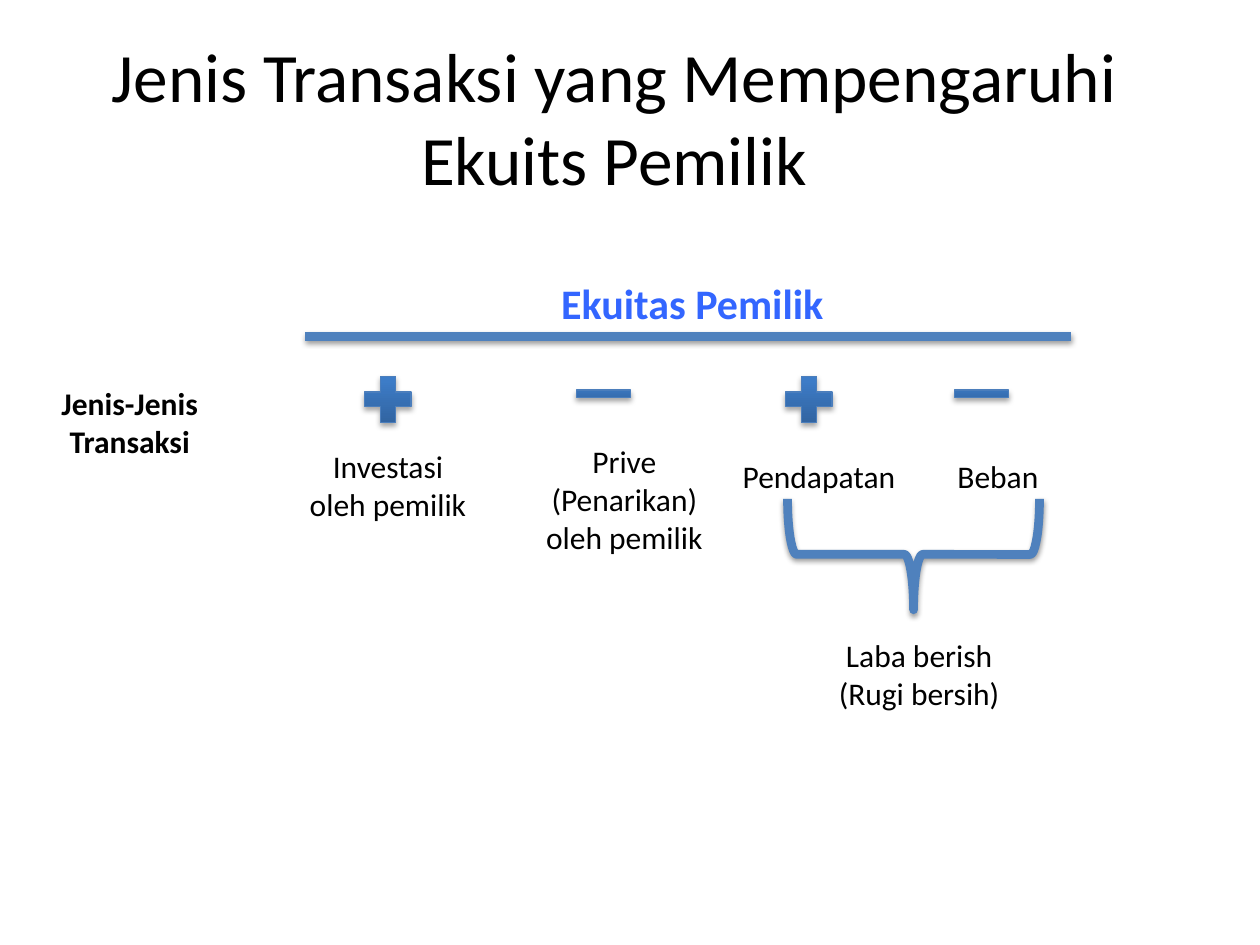
from lxml.etree import SubElement
from pptx import Presentation
from pptx.dml.color import RGBColor
from pptx.enum.shapes import MSO_CONNECTOR, MSO_SHAPE
from pptx.enum.text import MSO_ANCHOR, PP_ALIGN
from pptx.oxml.ns import qn
from pptx.util import Inches, Pt

COLORS = {
    "text": "000000", "heading": "3366FF", "rule": "4F81BD", "sign_edge": "4B7EBC",
    "sign_bottom": "2F5F99", "sign_middle": "3D7CC7", "sign_top": "3A7CCB",
}
FONT = "Calibri"
TITLE = "Jenis Transaksi yang Mempengaruhi Ekuits Pemilik"
LABELS = [
    ("Jenis-Jenis Transaksi", (0, 3, 2.06, 0.71), 18, True, "text"),
    ("Investasi oleh pemilik", (2.33, 3.5, 1.5, 0.71), 18, False, "text"),
    ("Prive (Penarikan) oleh pemilik", (4.08, 3.46, 1.75, 1.01), 18, False, "text"),
    ("Pendapatan", (5.75, 3.58, 1.5, 0.4), 18, False, "text"),
    ("Beban", (7.17, 3.58, 1.5, 0.4), 18, False, "text"),
    ("Laba berish (Rugi bersih)", (6.42, 5, 1.75, 0.71), 18, False, "text"),
    ("Ekuitas Pemilik", (4.08, 2.15, 2.83, 0.5), 24, True, "heading"),
]
SIGNS = [("plus", 2.83), ("minus", 4.5), ("plus", 6.17), ("minus", 7.5)]
SIGN_FORMS = {
    "plus": (MSO_SHAPE.MATH_PLUS, 2.92, 0.5, 0.5),
    "minus": (MSO_SHAPE.MATH_MINUS, 3, 0.58, 0.25),
}
SIGN_STOPS = [(0, "sign_bottom"), (80, "sign_middle"), (100, "sign_top")]


def rgb(color):
    return RGBColor.from_string(COLORS[color])


def box(*lengths):
    return [Inches(length) for length in lengths]


def set_text(holder, text, size, bold=False, color="text"):
    frame = holder.text_frame
    frame.word_wrap = True
    frame.text = text
    paragraph = frame.paragraphs[0]
    paragraph.alignment = PP_ALIGN.CENTER
    font = paragraph.runs[0].font
    font.name, font.size, font.bold = FONT, Pt(size), bold
    font.color.rgb = rgb(color)


def set_line(outlined, color, width):
    outlined.line.color.rgb = rgb(color)
    outlined.line.width = Pt(width)


def add_shadow(outlined, opacity, distance):
    effects = SubElement(outlined._element.spPr, qn("a:effectLst"))
    shadow = SubElement(effects, qn("a:outerShdw"), blurRad=str(Pt(3.1)),
                        dist=str(Pt(distance)), dir="5400000", rotWithShape="0")
    black = SubElement(shadow, qn("a:srgbClr"), val="000000")
    SubElement(black, qn("a:alpha"), val=str(opacity * 1000))


def add_sign(slide, sign, left):
    preset, top, width, height = SIGN_FORMS[sign]
    shape = slide.shapes.add_shape(preset, *box(left, top, width, height))
    shape.fill.gradient()
    shape.fill.gradient_angle = 90
    stops = shape._element.spPr.find(".//" + qn("a:gsLst"))
    for stop in list(stops):
        stops.remove(stop)
    for position, color in SIGN_STOPS:
        stop = SubElement(stops, qn("a:gs"), pos=str(position * 1000))
        SubElement(stop, qn("a:srgbClr"), val=COLORS[color])
    set_line(shape, "sign_edge", 0.75)
    add_shadow(shape, 35, 1.8)


def main():
    """Build the slide on transactions that affect owner's equity."""
    deck = Presentation()
    deck.slide_width, deck.slide_height = box(10, 7.5)
    slide = deck.slides.add_slide(deck.slide_layouts[5])

    title = slide.shapes.title
    title.left, title.top, title.width, title.height = box(0.5, 0.3, 8.75, 1.25)
    set_text(title, TITLE, 39.6)
    title.text_frame.vertical_anchor = MSO_ANCHOR.MIDDLE

    for sign, left in SIGNS:
        add_sign(slide, sign, left)

    brace = slide.shapes.add_shape(MSO_SHAPE.RIGHT_BRACE, *box(6.81, 3.4, 0.88, 2))
    brace.rotation = 90
    brace.fill.background()
    rule = slide.shapes.add_connector(MSO_CONNECTOR.STRAIGHT, *box(2.42, 2.67, 8.5, 2.67))
    for stroke in (brace, rule):
        set_line(stroke, "rule", 5)
        add_shadow(stroke, 38, 1.6)

    for text, place, size, bold, color in LABELS:
        label = slide.shapes.add_textbox(*box(*place))
        set_text(label, text, size, bold, color)

    deck.save("out.pptx")


if __name__ == "__main__":
    main()
